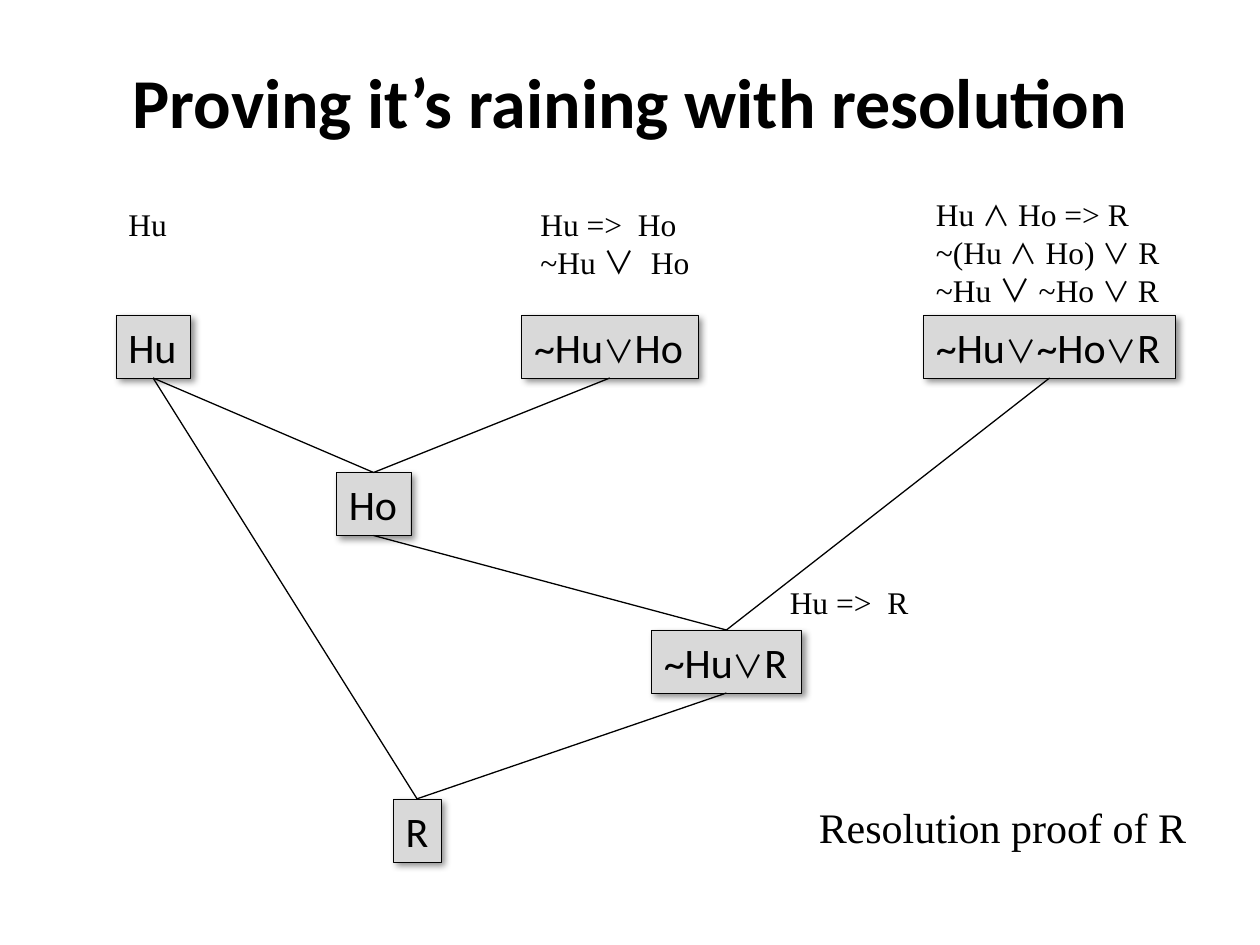
from dataclasses import dataclass

from lxml import etree
from pptx import Presentation
from pptx.dml.color import RGBColor
from pptx.enum.shapes import MSO_CONNECTOR, MSO_SHAPE
from pptx.enum.text import MSO_ANCHOR, MSO_AUTO_SIZE, PP_ALIGN
from pptx.oxml import parse_xml
from pptx.oxml.ns import nsdecls, qn
from pptx.util import Inches, Pt

RECTANGLE, STRAIGHT = MSO_SHAPE.RECTANGLE, MSO_CONNECTOR.STRAIGHT
TOP, MIDDLE = MSO_ANCHOR.TOP, MSO_ANCHOR.MIDDLE
LEFT, CENTER = PP_ALIGN.LEFT, PP_ALIGN.CENTER
GROW = MSO_AUTO_SIZE.SHAPE_TO_FIT_TEXT
TOP_SITE, BOTTOM_SITE = 0, 2


@dataclass(frozen=True)
class Theme:
    ink: RGBColor = RGBColor(0, 0, 0)
    box_fill: RGBColor = RGBColor(0xD9, 0xD9, 0xD9)
    clause_font: str = "Calibri"
    note_font: str = "Times New Roman"
    symbol_font: str = "Noto Sans CJK JP"
    title_size: int = 40
    large: int = 24
    note: int = 18
    border: float = 0.25
    edge: float = 0.75


THEME = Theme()

# A span is plain text or a (symbol, size) pair.
OR, SMALL_OR, SMALL_AND = ("∨", 18), ("∨", 16), ("∧", 16)
BREAK = "\n"

TITLE = "Proving it’s raining with resolution"

ROW_TOPS = [2.5, 3.75, 5, 6.34]
BOX_HEIGHT = 0.5
# name: (row, left, width, spans)
CLAUSES = {
    "humid": (0, 0.92, 0.59, ["Hu"]),
    "humid implies hot": (0, 4.14, 1.4, ["~Hu", OR, "Ho"]),
    "both imply rain": (0, 7.33, 2, ["~Hu", OR, "~Ho", OR, "R"]),
    "hot": (1, 2.67, 0.59, ["Ho"]),
    "humid implies rain": (2, 5.17, 1.19, ["~Hu", OR, "R"]),
    "rain": (3, 3.12, 0.38, ["R"]),
}
# each derived clause and the two clauses it is resolved from
RESOLUTIONS = {
    "hot": ("humid", "humid implies hot"),
    "humid implies rain": ("both imply rain", "hot"),
    "rain": ("humid implies rain", "humid"),
}
# (left, top, width, height), wrap, size, paragraphs
NOTES = [
    ((0.92, 1.58, 0.51, 0.4), False, THEME.note, [["Hu"]]),
    ((4.19, 1.58, 1.4, 0.71), False, THEME.note,
     [["Hu =>  Ho"], ["~Hu ", OR, "  Ho"]]),
    ((7.33, 1.5, 2.35, 1.01), True, THEME.note,
     [["Hu ", SMALL_AND, " Ho => R"],
      ["~(Hu ", SMALL_AND, " Ho) ", SMALL_OR, " R", BREAK,
       "~Hu ", OR, " ~Ho ", SMALL_OR, " R"]]),
    ((6.17, 4.58, 1.17, 0.4), False, THEME.note, [["Hu =>  R"]]),
    ((6.4, 6.31, 3.23, 0.5), False, THEME.large, [["Resolution proof of R"]]),
]

SHADOW = f"""<a:effectLst {nsdecls("a")}>
  <a:outerShdw blurRad="{Pt(4)}" dist="{Pt(3)}" dir="2700000" algn="tl" rotWithShape="0">
    <a:srgbClr val="000000"><a:alpha val="43000"/></a:srgbClr>
  </a:outerShdw>
</a:effectLst>"""


def write(shape, paragraphs, font_name, size, wrap=False):
    frame = shape.text_frame
    frame.word_wrap = wrap
    frame.auto_size = GROW
    frame.vertical_anchor = TOP
    for index, spans in enumerate(paragraphs):
        para = frame.add_paragraph() if index else frame.paragraphs[0]
        para.alignment = LEFT
        para.font.name = font_name
        para.font.size = Pt(size)
        para.font.color.rgb = THEME.ink
        for content in spans:
            if content == BREAK:
                para.add_line_break()
            elif isinstance(content, str):
                para.add_run().text = content
            else:
                add_symbol(para, *content)


def add_symbol(para, symbol, size):
    """Add a logic symbol, naming its font for Latin and East Asian text."""
    span = para.add_run()
    span.text = symbol
    span.font.size = Pt(size)
    span.font.name = THEME.symbol_font
    properties = span.font._element
    etree.SubElement(properties, qn("a:ea"), typeface=THEME.symbol_font)


def add_clause(page, row, left, width, spans):
    box = page.shapes.add_shape(
        RECTANGLE, *map(Inches, (left, ROW_TOPS[row], width, BOX_HEIGHT)))
    box.fill.solid()
    box.fill.fore_color.rgb = THEME.box_fill
    box.line.color.rgb = THEME.ink
    box.line.width = Pt(THEME.border)
    box._element.spPr.append(parse_xml(SHADOW))
    write(box, [spans], THEME.clause_font, THEME.large)
    return box


def add_edge(page, parent, child):
    edge = page.shapes.add_connector(STRAIGHT, 0, 0, 0, 0)
    edge.begin_connect(parent, BOTTOM_SITE)
    edge.end_connect(child, TOP_SITE)
    edge.line.color.rgb = THEME.ink
    edge.line.width = Pt(THEME.edge)
    etree.SubElement(edge._element.spPr, qn("a:effectLst"))


def add_title(page):
    title = page.shapes.title
    title.left, title.top, title.width, title.height = map(
        Inches, (0.75, 0.17, 8.5, 1.25))
    title.text_frame.text = TITLE
    title.text_frame.vertical_anchor = MIDDLE
    para = title.text_frame.paragraphs[0]
    para.alignment = CENTER
    para.font.name = THEME.clause_font
    para.font.size = Pt(THEME.title_size)
    para.font.bold = True
    para.font.color.rgb = THEME.ink


def main():
    deck = Presentation()
    deck.slide_width, deck.slide_height = Inches(10), Inches(7.5)
    page = deck.slides.add_slide(deck.slide_layouts[5])
    add_title(page)
    boxes = {name: add_clause(page, *clause) for name, clause in CLAUSES.items()}
    for child, parents in RESOLUTIONS.items():
        for parent in parents:
            add_edge(page, boxes[parent], boxes[child])
    for place, wrap, size, paragraphs in NOTES:
        note = page.shapes.add_textbox(*map(Inches, place))
        write(note, paragraphs, THEME.note_font, size, wrap)
    deck.save("out.pptx")


if __name__ == "__main__":
    main()
